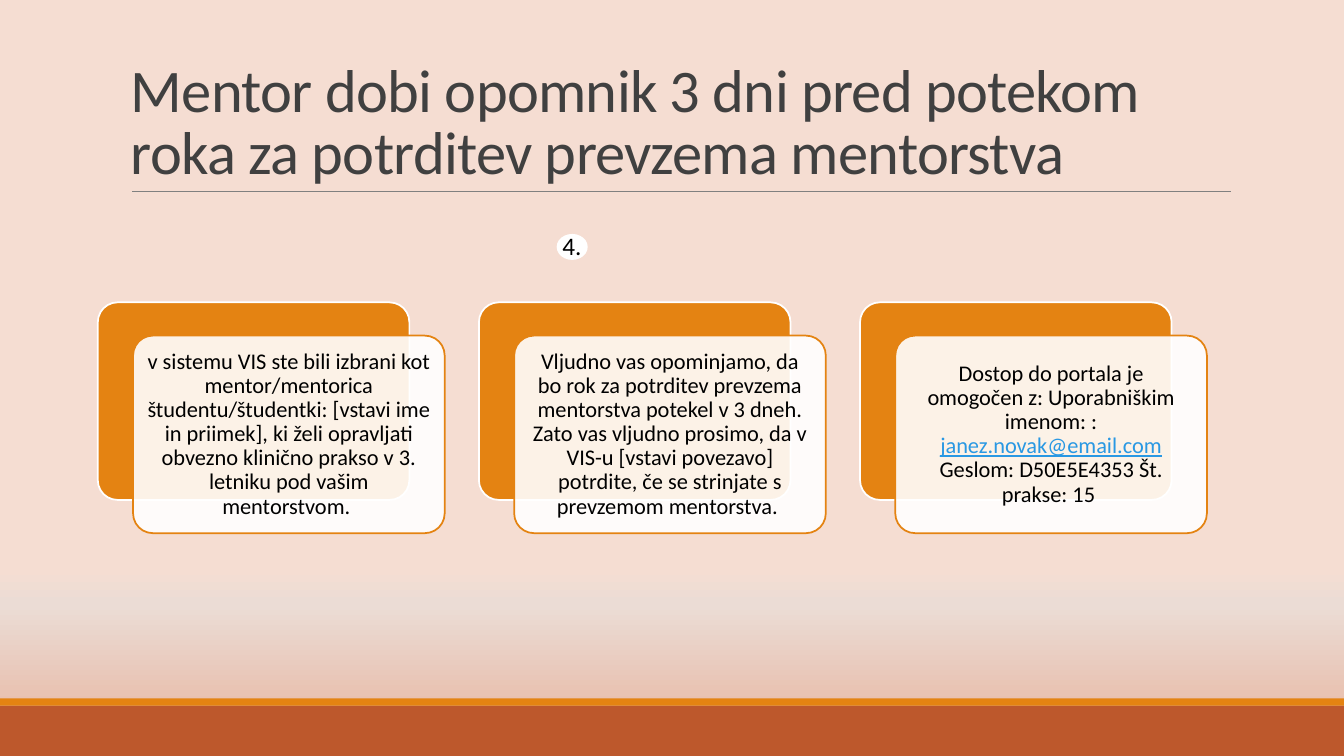
"""Builds the slide about the mentor's reminder before the confirmation deadline."""
import pptx
import pptx.dml.color
import pptx.enum.shapes
import pptx.enum.text
import pptx.oxml
import pptx.oxml.ns
import pptx.util
from lxml import etree

Inches, Pt = pptx.util.Inches, pptx.util.Pt
SHAPE = pptx.enum.shapes.MSO_SHAPE
ANCHOR = pptx.enum.text.MSO_ANCHOR
ALIGN = pptx.enum.text.PP_ALIGN
qn = pptx.oxml.ns.qn

TITLE = "Mentor dobi opomnik 3 dni pred potekom roka za potrditev prevzema mentorstva"
STEP_NUMBER = "4."
EMAIL = "janez.novak@email.com"
CARDS = [
    ["v sistemu VIS ste bili izbrani kot mentor/mentorica študentu/študentki: "
     "[vstavi ime in priimek], ki želi opravljati obvezno klinično prakso v 3. "
     "letniku pod vašim mentorstvom. "],
    ["Vljudno vas opominjamo, da bo rok za potrditev prevzema mentorstva potekel "
     "v 3 dneh. Zato vas vljudno prosimo, da v VIS-u [vstavi povezavo] potrdite, "
     "če se strinjate s prevzemom mentorstva. "],
    ["Dostop do portala je omogočen z: Uporabniškim imenom: : ", EMAIL,
     " Geslom: D50E5E4353 Št. prakse: 15 "],
]

FONT = "Calibri"
ORANGE, RUST, WHITE, BLACK = "E48312", "BD582C", "FFFFFF", "000000"
TITLE_GRAY, RULE_GRAY, LINK_BLUE = "404040", "808080", "2998E3"
BACKGROUND = [(75, "F5DDD2"), (80, "EBDCD5"), (100, "E7B19A"), (100, "EFCBBC")]

CARD_LEFT, CARD_TOP, CARD_STEP = 0.97, 3, 3.78
CARD_WIDTH, CARD_HEIGHT = 3.09, 1.96
FRONT_DX, FRONT_DY = 0.35, 0.33


def paint(color_format, value):
    color_format.rgb = pptx.dml.color.RGBColor.from_string(value)


def add_block(kind, left, top, width, height, fill, line=None):
    block = slide.shapes.add_shape(
        kind, Inches(left), Inches(top), Inches(width), Inches(height))
    block.shadow.inherit = False
    block.fill.solid()
    paint(block.fill.fore_color, fill)
    if line:
        paint(block.line.color, line)
        block.line.width = Pt(1.25)
    else:
        block.line.fill.background()
    return block


def add_card(left, top, fill, line):
    card = add_block(SHAPE.ROUNDED_RECTANGLE, left, top, CARD_WIDTH, CARD_HEIGHT, fill, line)
    card.adjustments[0] = 0.1
    return card


def write(frame, pieces, size, color, align=ALIGN.LEFT, spacing=1.0):
    frame.word_wrap = True
    paragraph = frame.paragraphs[0]
    paragraph.alignment = align
    paragraph.line_spacing = spacing
    paragraph.font.name = FONT
    paragraph.font.size = Pt(size)
    for piece in pieces:
        run = paragraph.add_run()
        run.text = piece
        run.font.name = FONT
        run.font.size = Pt(size)
        paint(run.font.color, LINK_BLUE if piece == EMAIL else color)
        if piece == EMAIL:
            run.font.underline = True
    return paragraph


def add_text(left, top, width, height, text, size, color, spacing=1.0):
    box = slide.shapes.add_textbox(Inches(left), Inches(top), Inches(width), Inches(height))
    return box.text_frame, write(box.text_frame, [text], size, color, spacing=spacing)


deck = pptx.Presentation()
deck.slide_width, deck.slide_height = Inches(13.33), Inches(7.5)
slide = deck.slides.add_slide(deck.slide_layouts[6])

slide.background.fill.gradient()
gradient = slide.background._cSld.find(".//" + qn("a:gradFill"))
stops = gradient.find(qn("a:gsLst"))
for stop in list(stops):
    stops.remove(stop)
for percent, color in BACKGROUND:
    stop = etree.SubElement(stops, qn("a:gs"), pos=str(percent * 1000))
    etree.SubElement(stop, qn("a:srgbClr"), val=color)
gradient.find(qn("a:lin")).set("ang", str(90 * 60000))

add_block(SHAPE.RECTANGLE, 0, 7, 13.33, 0.5, RUST)
add_block(SHAPE.RECTANGLE, 0, 6.93, 13.33, 0.07, ORANGE)

title_rule = slide.shapes.add_connector(
    pptx.enum.shapes.MSO_CONNECTOR.STRAIGHT,
    Inches(1.31), Inches(1.9), Inches(12.21), Inches(1.9))
paint(title_rule.line.color, RULE_GRAY)
title_rule.line.width = Pt(0.5)
etree.SubElement(title_rule._element.spPr, qn("a:effectLst"))

for index, pieces in enumerate(CARDS):
    left = CARD_LEFT + index * CARD_STEP
    add_card(left, CARD_TOP, ORANGE, WHITE)
    front = add_card(left + FRONT_DX, CARD_TOP + FRONT_DY, WHITE, ORANGE)
    front_color = front._element.spPr.find(qn("a:solidFill"))[0]
    etree.SubElement(front_color, qn("a:alpha"), val="90000")
    frame = front.text_frame
    frame.vertical_anchor = ANCHOR.MIDDLE
    frame.margin_left = frame.margin_right = Inches(0.07)
    frame.margin_top = frame.margin_bottom = Inches(0.07)
    write(frame, pieces, 16, BLACK, ALIGN.CENTER, 0.9)

title_frame, title = add_text(1.2, 0.31, 11, 1.59, TITLE, 43.2, TITLE_GRAY, 0.85)
title_frame.vertical_anchor = ANCHOR.BOTTOM
title.runs[0].font._element.set("spc", "-50")

add_block(SHAPE.OVAL, 5.53, 2.33, 0.29, 0.24, WHITE, WHITE)
add_text(5.48, 2.24, 0.56, 0.4, STEP_NUMBER, 18, BLACK)

deck.save("out.pptx")
